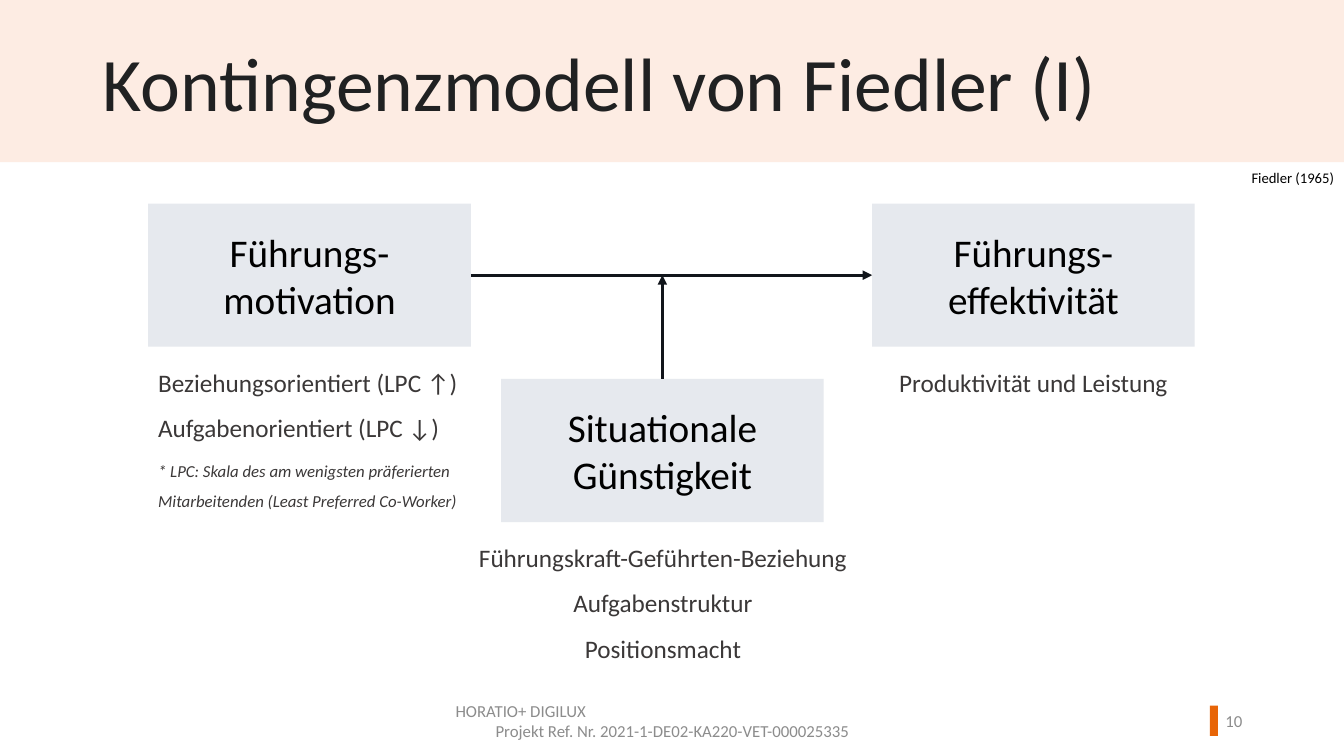
from lxml import etree
from pptx import Presentation
from pptx.dml.color import RGBColor
from pptx.enum.shapes import MSO_CONNECTOR as CONN, MSO_SHAPE as SHAPE
from pptx.enum.text import MSO_ANCHOR as ANCHOR, PP_ALIGN as ALIGN
from pptx.oxml.ns import qn
from pptx.util import Inches, Pt

FONT = "Calibri"
COLORS = {
    "band": "FDECE3", "accent": "E86507", "footer": "8C8C8C", "title": "202122",
    "box": "E6E9EE", "arrow": "11151B", "detail": "3B3838", "black": "000000",
}
BOX_W, BOX_H = 3.2, 1.42


def color(name):
    return RGBColor.from_string(COLORS[name])


def write(tf, lines, size, font_color, align=ALIGN.LEFT, anchor=ANCHOR.TOP, spacing=None):
    """Fill a text frame with one formatted paragraph per line."""
    tf.word_wrap = True
    tf.vertical_anchor = anchor
    for i, line in enumerate(lines):
        p = tf.paragraphs[0] if i == 0 else tf.add_paragraph()
        p.text = line
        p.alignment = align
        if spacing:
            p.line_spacing = spacing
        for r in p.runs:
            r.font.name = FONT
            r.font.size = Pt(size)
            r.font.color.rgb = color(font_color)
    return tf.paragraphs


def add_text(s, box, lines, size, font_color, **style):
    tb = s.shapes.add_textbox(*map(Inches, box))
    return write(tb.text_frame, lines, size, font_color, **style)


def add_rect(s, box, fill):
    sp = s.shapes.add_shape(SHAPE.RECTANGLE, *map(Inches, box))
    sp.shadow.inherit = False
    sp.fill.solid()
    sp.fill.fore_color.rgb = color(fill)
    sp.line.fill.background()
    return sp


def add_arrow(s, start, end):
    c = s.shapes.add_connector(CONN.STRAIGHT, *map(Inches, (*start, *end)))
    c.line.color.rgb = color("arrow")
    c.line.width = Pt(2.25)
    ln = c.line._get_or_add_ln()
    etree.SubElement(ln, qn("a:tailEnd"), type="triangle")
    etree.SubElement(c._element.spPr, qn("a:effectLst"))


def add_header(s, x, y, w, h):
    add_rect(s, (x, y, w, h), "band")
    add_text(s, (x + 0.92, y + 0.41, 10.94, 0.85), ["Kontingenzmodell von Fiedler (I)"],
             54, "title", spacing=0.9)
    add_text(s, (x + w - 1.13, y + h + 0.02, 1.13, 0.29), ["Fiedler (1965)"],
             10.5, "black", align=ALIGN.RIGHT)


def add_factor(s, x, y, label):
    sp = add_rect(s, (x, y, BOX_W, BOX_H), "box")
    write(sp.text_frame, [label], 28, "black", align=ALIGN.CENTER, anchor=ANCHOR.MIDDLE)


def add_model(s, x, y):
    """Draw the three factors, their arrows and the details below each box."""
    effect_x, situation_x, situation_y = x + 7.18, x + 3.5, y + 1.74
    add_factor(s, x, y, "Führungs-motivation")
    add_factor(s, effect_x, y, "Führungs-effektivität")
    add_factor(s, situation_x, situation_y, "Situationale Günstigkeit")

    arrow_y = y + BOX_H / 2
    situation_mid = situation_x + BOX_W / 2
    add_arrow(s, (x + BOX_W, arrow_y), (effect_x, arrow_y))
    add_arrow(s, (situation_mid, situation_y), (situation_mid, arrow_y))

    below = y + BOX_H
    motivation = add_text(s, (x, below, 3.67, 1.67), [
        "Beziehungsorientiert (LPC ↑)",
        "Aufgabenorientiert (LPC ↓)",
        "* LPC: Skala des am wenigsten präferierten Mitarbeitenden (Least Preferred Co-Worker)",
    ], 18, "detail", spacing=1.5)
    for p in motivation[1:]:
        p.space_after = Pt(6)
    note = motivation[-1].runs[0].font
    note.size, note.italic = Pt(12), True

    add_text(s, (effect_x + 0.12, below, 2.96, 0.52), ["Produktivität und Leistung"],
             18, "detail", align=ALIGN.CENTER, spacing=1.5)
    add_text(s, (situation_x - 0.7, situation_y + BOX_H, 4.61, 1.43),
             ["Führungskraft-Geführten-Beziehung", "Aufgabenstruktur", "Positionsmacht"],
             18, "detail", align=ALIGN.CENTER, spacing=1.5)


def add_footer(s, y, h):
    project = add_text(s, (4.42, y, 4.5, h),
                       ["HORATIO+ DIGILUX", "Projekt Ref. Nr. 2021-1-DE02-KA220-VET-000025335"],
                       12, "footer", align=ALIGN.CENTER, anchor=ANCHOR.MIDDLE)
    project[0].alignment = ALIGN.LEFT
    add_rect(s, (12, y + 0.05, 0.08, 0.3), "accent")
    add_text(s, (11.77, y, 0.65, h), ["10"], 12, "footer",
             align=ALIGN.RIGHT, anchor=ANCHOR.MIDDLE)


def main():
    prs = Presentation()
    prs.slide_width, prs.slide_height = Inches(13.33), Inches(7.5)
    s = prs.slides.add_slide(prs.slide_layouts[6])
    add_header(s, 0, 0, 13.33, 1.61)
    add_model(s, 1.47, 2.02)
    add_footer(s, 6.95, 0.4)
    prs.save("out.pptx")


if __name__ == "__main__":
    main()
